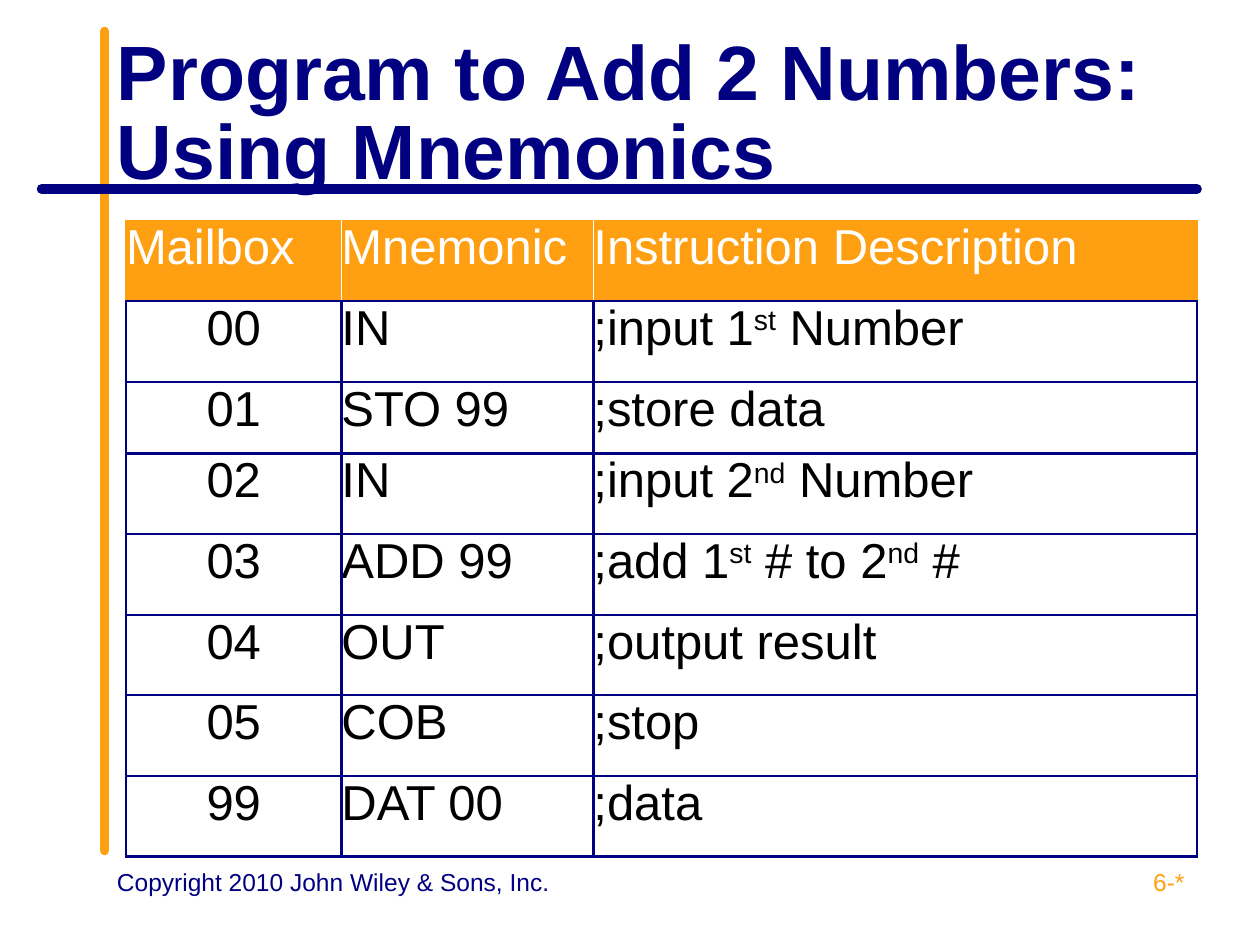
import pptx
import pptx.dml.color
import pptx.enum.shapes
import pptx.enum.text
import pptx.oxml
import pptx.oxml.ns
import pptx.util
from dataclasses import dataclass

Inches = pptx.util.Inches
Align = pptx.enum.text.PP_ALIGN
Anchor = pptx.enum.text.MSO_ANCHOR


@dataclass(frozen=True)
class Theme:
    font: str = "Arial"
    navy: str = "000080"
    orange: str = "FF9F11"
    white: str = "FFFFFF"
    black: str = "000000"
    title_size: int = 44
    table_size: int = 28
    footer_size: int = 14
    rule_width: float = 5.5
    grid_width: float = 1.5
    header_grid_width: float = 1


THEME = Theme()

TITLE = "Program to Add 2 Numbers:\nUsing Mnemonics"
COPYRIGHT = "Copyright 2010 John Wiley & Sons, Inc."
PAGE_NUMBER = "6-*"
HEADER = ("Mailbox", "Mnemonic", "Instruction Description")
INSTRUCTIONS = [
    ("00", "IN", ";input 1^st^ Number"),
    ("01", "STO 99", ";store data"),
    ("02", "IN", ";input 2^nd^ Number"),
    ("03", "ADD 99", ";add 1^st^ # to 2^nd^ #"),
    ("04", "OUT", ";output result"),
    ("05", "COB", ";stop"),
    ("99", "DAT 00", ";data"),
]
COLUMN_WIDTHS = (1.71, 2, 4.79)
ROW_HEIGHT = 0.64
ROW_HEIGHT_EXCEPTIONS = {2: 0.57}
RULES = [
    ((0.83, 6.75), (0.83, 0.25), THEME.orange),
    ((9.5, 1.5), (0.33, 1.5), THEME.navy),
]


def write_text(frame, text, *, size, color, bold=False, align=Align.LEFT,
               anchor=None, line_spacing=None):
    frame.word_wrap = True
    if anchor is not None:
        frame.vertical_anchor = anchor
    paragraph = frame.paragraphs[0]
    paragraph.alignment = align
    if line_spacing:
        paragraph.line_spacing = line_spacing
    for line_index, line in enumerate(text.split("\n")):
        if line_index:
            paragraph.add_line_break()
        for part_index, part in enumerate(line.split("^")):
            run = paragraph.add_run()
            run.text = part
            run.font.name = THEME.font
            run.font.size = pptx.util.Pt(size)
            run.font.bold = bold
            run.font.color.rgb = pptx.dml.color.RGBColor.from_string(color)
            if part_index % 2:
                run.font._element.set("baseline", "30000")


def add_text_box(slide, bounds, text, **text_format):
    shape = slide.shapes.add_textbox(*map(Inches, bounds))
    write_text(shape.text_frame, text, **text_format)


def add_rule(slide, start, end, color):
    connector = slide.shapes.add_connector(
        pptx.enum.shapes.MSO_CONNECTOR.STRAIGHT, *map(Inches, start + end))
    connector.line.color.rgb = pptx.dml.color.RGBColor.from_string(color)
    connector.line.width = pptx.util.Pt(THEME.rule_width)
    properties = connector._element.spPr
    properties.find(pptx.oxml.ns.qn("a:ln")).set("cap", "rnd")
    properties.append(pptx.oxml.parse_xml(
        f'<a:effectLst {pptx.oxml.ns.nsdecls("a")}/>'))


def set_borders(cell, borders):
    properties = cell._tc.get_or_add_tcPr()
    for side in "LRTB":
        color, width = borders[side]
        properties.append(pptx.oxml.parse_xml(
            f'<a:ln{side} {pptx.oxml.ns.nsdecls("a")} w="{pptx.util.Pt(width)}">'
            f'<a:solidFill><a:srgbClr val="{color}"/></a:solidFill></a:ln{side}>'))


def cell_borders(row_index, column_index):
    grid = (THEME.navy, THEME.grid_width)
    if row_index:
        return dict.fromkeys("LRTB", grid)
    edge = (THEME.orange, THEME.header_grid_width)
    divider = (THEME.white, THEME.header_grid_width)
    return {
        "L": divider if column_index else edge,
        "R": divider if column_index < len(HEADER) - 1 else edge,
        "T": edge,
        "B": grid,
    }


def add_instruction_table(slide):
    rows = [HEADER, *INSTRUCTIONS]
    heights = [ROW_HEIGHT_EXCEPTIONS.get(index, ROW_HEIGHT) for index in range(len(rows))]
    table = slide.shapes.add_table(
        len(rows), len(HEADER), Inches(1), Inches(1.75),
        Inches(sum(COLUMN_WIDTHS)), Inches(sum(heights))).table
    table.horz_banding = False
    for column, width in zip(table.columns, COLUMN_WIDTHS):
        column.width = Inches(width)
    for row_index, values in enumerate(rows):
        table.rows[row_index].height = Inches(heights[row_index])
        for column_index, text in enumerate(values):
            cell = table.cell(row_index, column_index)
            cell.margin_left = cell.margin_right = cell.margin_top = cell.margin_bottom = 0
            set_borders(cell, cell_borders(row_index, column_index))
            if row_index:
                cell.fill.background()
            else:
                cell.fill.solid()
                cell.fill.fore_color.rgb = pptx.dml.color.RGBColor.from_string(THEME.orange)
            centered = row_index and column_index == 0
            write_text(cell.text_frame, text, size=THEME.table_size,
                       color=THEME.black if row_index else THEME.white,
                       align=Align.CENTER if centered else Align.LEFT)


def main():
    presentation = pptx.Presentation()
    presentation.slide_width = Inches(10)
    presentation.slide_height = Inches(7.5)
    slide = presentation.slides.add_slide(presentation.slide_layouts[6])
    for start, end, color in RULES:
        add_rule(slide, start, end, color)
    add_text_box(slide, (0.83, 6.83, 3.67, 0.52), COPYRIGHT,
                 size=THEME.footer_size, color=THEME.navy)
    add_text_box(slide, (7.17, 6.83, 2.33, 0.52), PAGE_NUMBER,
                 size=THEME.footer_size, color=THEME.orange, align=Align.RIGHT)
    add_text_box(slide, (0.83, 0.3, 8.67, 1.25), TITLE,
                 size=THEME.title_size, color=THEME.navy, bold=True,
                 anchor=Anchor.MIDDLE, line_spacing=0.85)
    add_instruction_table(slide)
    presentation.save("out.pptx")


if __name__ == "__main__":
    main()
